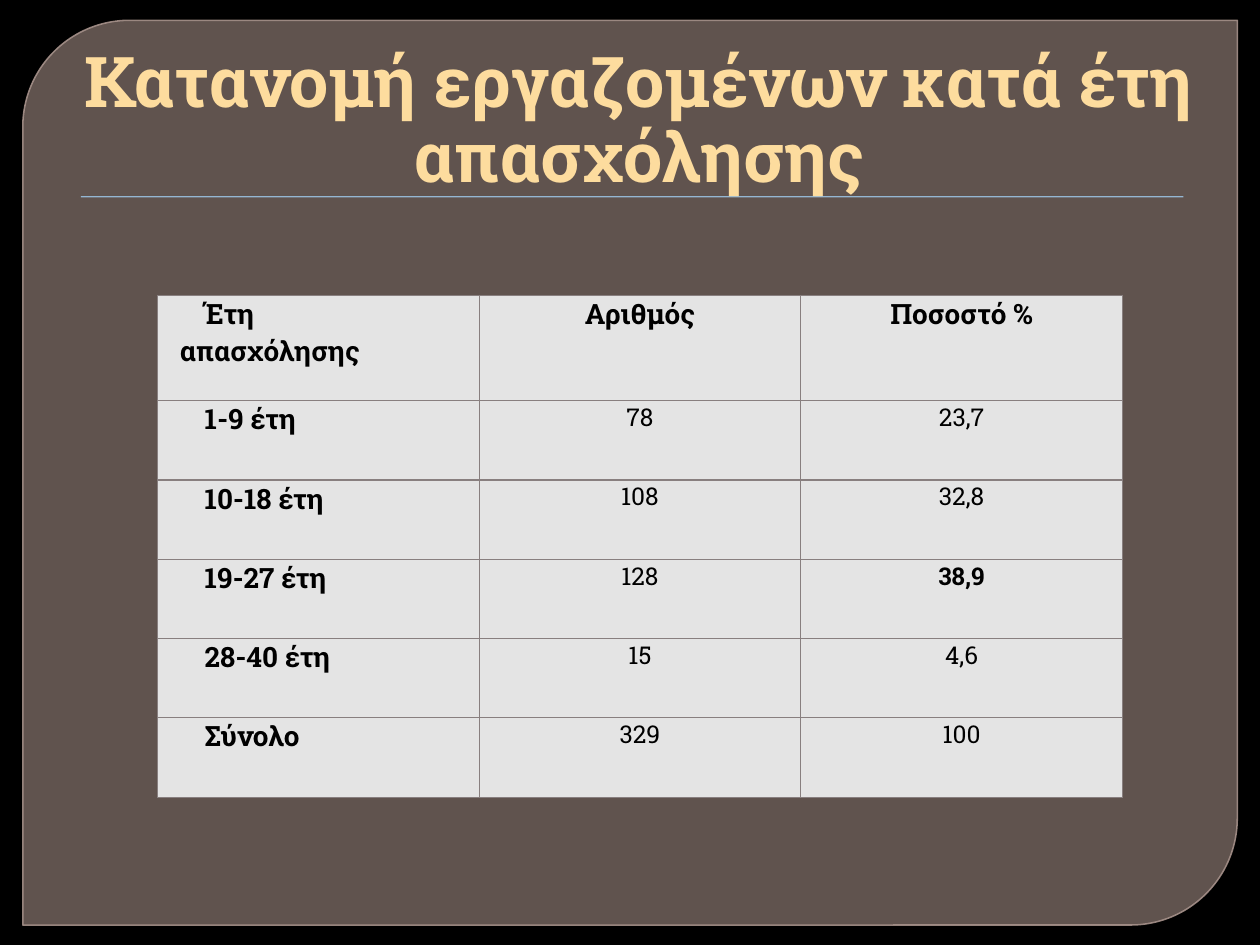
from lxml import etree
from pptx import Presentation
from pptx.dml.color import RGBColor
from pptx.enum import shapes, text
from pptx.oxml.ns import qn
from pptx.util import Pt

BLACK = RGBColor(0x00, 0x00, 0x00)
PANEL = RGBColor(0x94, 0x80, 0x79)
PANEL_EDGE = RGBColor(0xA9, 0x94, 0x8D)
RULE = RGBColor(0x94, 0xB6, 0xD2)
TITLE = RGBColor(0xFD, 0xDC, 0x9E)
CELL = RGBColor(0xE4, 0xE4, 0xE4)
BORDER = "887F7F"
FONT = "Roboto Slab"


def write(frame, content, size, color=BLACK, bold=False, align=text.PP_ALIGN.CENTER,
          left=0, right=0, indent=0, spacing=1.0):
    paragraph = frame.paragraphs[0]
    paragraph.alignment = align
    paragraph.line_spacing = spacing
    properties = paragraph._p.get_or_add_pPr()
    for name, value in (("marL", left), ("marR", right), ("indent", indent)):
        properties.set(name, str(Pt(value)))
    run = paragraph.add_run()
    run.text = content
    run.font.name = FONT
    run.font.size = Pt(size)
    run.font.bold = bold
    run.font.color.rgb = color


def set_alpha(fill_parent, percent):
    color = fill_parent.find(qn("a:solidFill"))[0]
    etree.SubElement(color, qn("a:alpha")).set("val", str(percent * 1000))


presentation = Presentation()
presentation.slide_width = Pt(720)
presentation.slide_height = Pt(540)
slide = presentation.slides.add_slide(presentation.slide_layouts[6])
slide.background.fill.solid()
slide.background.fill.fore_color.rgb = BLACK

# Panel with two rounded corners
panel = slide.shapes.add_shape(shapes.MSO_SHAPE.ROUND_2_DIAG_RECTANGLE,
                               Pt(13), Pt(11.6), Pt(694), Pt(517))
panel.adjustments[0] = 0.118
panel.adjustments[1] = 0
panel.shadow.inherit = False
panel.fill.solid()
panel.fill.fore_color.rgb = PANEL
panel.line.color.rgb = PANEL_EDGE
panel.line.width = Pt(0.87)
set_alpha(panel._element.spPr, 65)
set_alpha(panel._element.spPr.find(qn("a:ln")), 88)

# Rule under the title
rule = slide.shapes.add_shape(shapes.MSO_SHAPE.RECTANGLE,
                              Pt(46.2), Pt(112.1), Pt(630), Pt(0.72))
rule.shadow.inherit = False
rule.fill.solid()
rule.fill.fore_color.rgb = RULE
rule.line.fill.background()

# Title
title = slide.shapes.add_textbox(Pt(28), Pt(20.2), Pt(670), Pt(93))
title.text_frame.word_wrap = True
title.text_frame.vertical_anchor = text.MSO_ANCHOR.BOTTOM
title.text_frame.margin_bottom = 0
write(title.text_frame, "Κατανομή εργαζομένων κατά έτη απασχόλησης", 40,
      color=TITLE, bold=True, left=4.3, spacing=0.9)

# Table of employees by years of employment
rows = [
    ("Έτη απασχόλησης", "Αριθμός", "Ποσοστό %"),
    ("1-9 έτη", "78", "23,7"),
    ("10-18 έτη", "108", "32,8"),
    ("19-27 έτη", "128", "38,9"),
    ("28-40 έτη", "15", "4,6"),
    ("Σύνολο", "329", "100"),
]
HIGHEST = "38,9"
table = slide.shapes.add_table(len(rows), 3, Pt(90), Pt(168.7), Pt(551.4), Pt(286.8)).table
for column in table.columns:
    column.width = Pt(183.8)
for r, values in enumerate(rows):
    table.rows[r].height = Pt(45.3 if r else 60.3)
    for c, value in enumerate(values):
        cell = table.cell(r, c)
        cell.margin_left = cell.margin_right = Pt(5.4)
        cell.margin_top = cell.margin_bottom = 0
        heading = r == 0 or c == 0
        write(cell.text_frame, value, 16 if heading else 14,
              bold=heading or value == HIGHEST,
              align=text.PP_ALIGN.CENTER if c else text.PP_ALIGN.LEFT,
              left=7.2, right=21.6, indent=14.4)
        # Borders come before the fill in the cell properties
        properties = cell._tc.get_or_add_tcPr()
        for side in ("a:lnL", "a:lnR", "a:lnT", "a:lnB"):
            line = etree.SubElement(properties, qn(side), w=str(Pt(0.75)))
            fill = etree.SubElement(line, qn("a:solidFill"))
            etree.SubElement(fill, qn("a:srgbClr"), val=BORDER)
        cell.fill.solid()
        cell.fill.fore_color.rgb = CELL

presentation.save("out.pptx")
